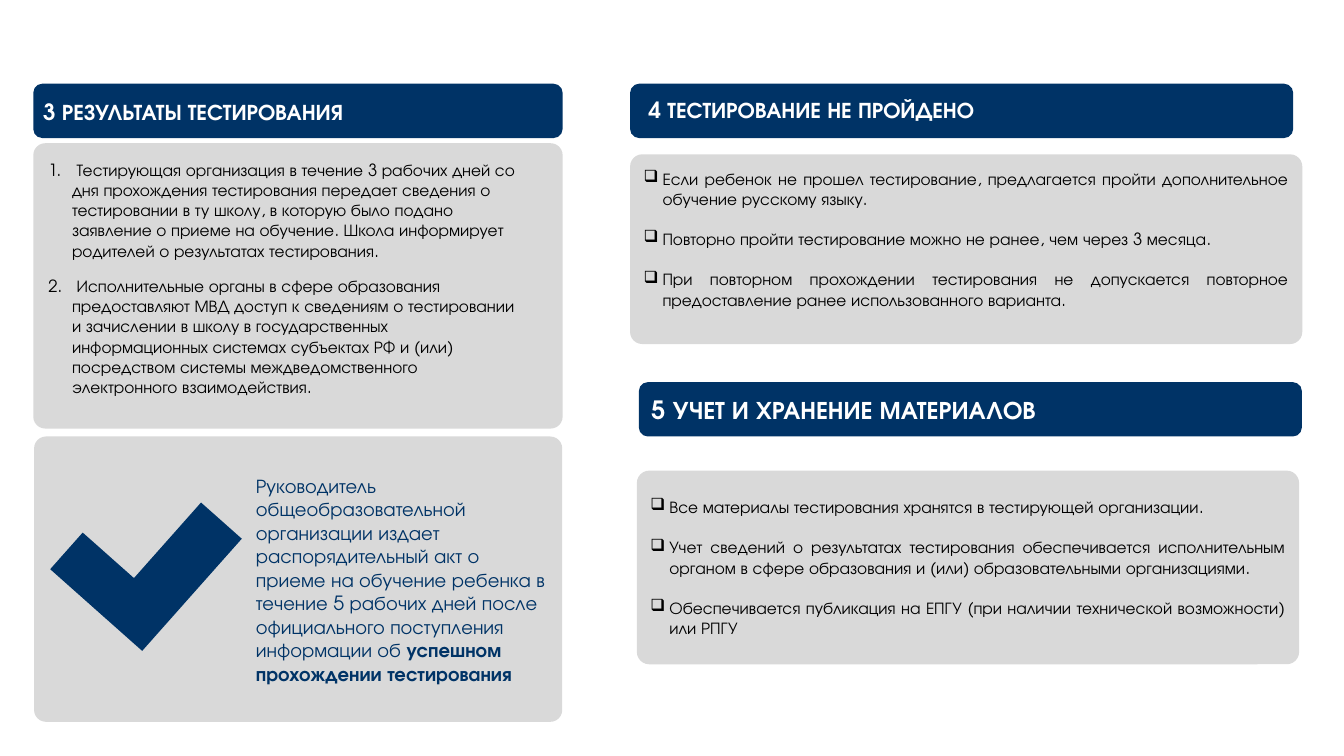
from lxml import etree
from pptx import Presentation
from pptx.dml.color import RGBColor
from pptx.enum.shapes import MSO_SHAPE
from pptx.enum.text import MSO_ANCHOR, MSO_AUTO_SIZE, PP_ALIGN
from pptx.oxml.ns import qn
from pptx.util import Cm, Pt

ROUND, CORNER = MSO_SHAPE.ROUNDED_RECTANGLE, MSO_SHAPE.CORNER
TOP, MIDDLE = MSO_ANCHOR.TOP, MSO_ANCHOR.MIDDLE
LEFT, JUSTIFY = PP_ALIGN.LEFT, PP_ALIGN.JUSTIFY
GROW = MSO_AUTO_SIZE.SHAPE_TO_FIT_TEXT

FONT = "TeX Gyre Adventor"
COLORS = {"navy": "003366", "gray": "D9D9D9", "white": "FFFFFF", "black": "000000"}
BOX_ADJ, PANEL_ADJ, HEADER_ADJ = 0.064, 0.042, 0.167

RESULTS = [
    " Тестирующая организация в течение 3 рабочих дней со дня прохождения тестирования передает сведения о тестировании в ту школу, в которую было подано заявление о приеме на обучение. Школа информирует родителей о результатах тестирования.",
    " Исполнительные органы в сфере образования предоставляют МВД доступ к сведениям о тестировании и зачислении в школу в государственных информационных системах субъектах РФ и (или) посредством системы междведомственного электронного взаимодействия.",
]
ORDER = [[
    ("Руководитель общеобразовательной организации издает распорядительный акт о приеме на обучение ребенка в течение 5 рабочих дней после официального поступления информации об ", False),
    ("успешном прохождении тестирования", True),
]]
FAILED = [
    "Если ребенок не прошел тестирование, предлагается пройти дополнительное обучение русскому языку.",
    "Повторно пройти тестирование можно не ранее, чем через 3 месяца.",
    "При повторном прохождении тестирования не допускается повторное предоставление ранее использованного варианта.",
]
STORAGE = [
    "Все материалы тестирования хранятся в тестирующей организации.",
    "Учет сведений о результатах тестирования обеспечивается исполнительным органом в сфере образования и (или) образовательными организациями.",
    "Обеспечивается публикация на ЕПГУ (при наличии технической возможности) или РПГУ",
]
HEADERS = [
    ((0.84, 2.11, 13.34, 1.37), (0.84, 2.34, 15.67, 0.94), "3 РЕЗУЛЬТАТЫ ТЕСТИРОВАНИЯ"),
    ((15.88, 2.11, 16.71, 1.37), (16.1, 2.31, 13.94, 0.94), "4 ТЕСТИРОВАНИЕ НЕ ПРОЙДЕНО"),
]
LAST_HEADER = ((16.1, 9.63, 16.71, 1.37), "5 УЧЕТ И ХРАНЕНИЕ МАТЕРИАЛОВ")
PANELS = [(0.84, 3.61, 13.34, 7.19), (0.86, 11, 13.31, 7.19)]
RESULTS_BOX = (0.84, 3.61, 15.24, 6.81)
ORDER_BOX = (6.12, 12.47, 8.05, 4.27)
CHECK_BOX = (2.13, 12.07, 3.1, 3.78)
CHECKLISTS = [
    ((15.88, 3.89, 16.94, 4.78), FAILED, 0.64),
    ((16.05, 11.86, 16.69, 4.88), STORAGE, 0.13),
]
NUMBERED = ("a:buAutoNum", {"type": "arabicPeriod"}, 0.6)
BOXED = ("a:buChar", {"char": "❑"}, 0.48)


def add_box(slide, box, fill=None, kind=ROUND, adj=(BOX_ADJ,)):
    sp = slide.shapes.add_shape(kind, *map(Cm, box))
    sp.shadow.inherit = False
    sp.line.fill.background()
    if fill:
        sp.fill.solid()
        sp.fill.fore_color.rgb = RGBColor.from_string(COLORS[fill])
    else:
        sp.fill.background()
    for i, value in enumerate(adj):
        sp.adjustments[i] = value
    return sp


def write(sp, paragraphs, size=12, color="black", bold=False, align=LEFT,
          anchor=MIDDLE, gap=0, bullet=None, right=0.25, bottom=0.13):
    tf = sp.text_frame
    tf.word_wrap = True
    tf.vertical_anchor = anchor
    tf.margin_right, tf.margin_bottom = Cm(right), Cm(bottom)
    for i, content in enumerate(paragraphs):
        p = tf.add_paragraph() if i else tf.paragraphs[0]
        p.alignment = align
        p.space_before = Pt(gap if i else 0)
        if bullet:
            tag, attributes, indent = bullet
            pPr = p._p.get_or_add_pPr()
            pPr.set("marL", str(Cm(indent)))
            pPr.set("indent", str(-Cm(indent)))
            etree.SubElement(pPr, qn(tag), attributes)
        runs = [(content, bold)] if isinstance(content, str) else content
        for text, is_bold in runs:
            r = p.add_run()
            r.text = text
            r.font.name = FONT
            r.font.size = Pt(size)
            r.font.bold = is_bold
            r.font.color.rgb = RGBColor.from_string(COLORS[color])


def main():
    """Build the slide on testing results and save it."""
    prs = Presentation()
    prs.slide_width, prs.slide_height = Cm(33.87), Cm(19.05)
    s = prs.slides.add_slide(prs.slide_layouts[6])

    for box in PANELS:
        add_box(s, box, "gray", adj=(PANEL_ADJ,))
    for box, title_box, title in HEADERS:
        add_box(s, box, "navy", adj=(HEADER_ADJ,))
        tb = s.shapes.add_textbox(*map(Cm, title_box))
        write(tb, [title], size=16, color="white", bold=True, anchor=TOP)
        tb.text_frame.auto_size = GROW
    box, title = LAST_HEADER
    write(add_box(s, box, "navy", adj=(HEADER_ADJ,)), [title],
          size=18, color="white", bold=True)

    write(add_box(s, RESULTS_BOX), RESULTS, gap=10.9, bullet=NUMBERED, right=2.8)
    write(add_box(s, ORDER_BOX), ORDER, size=14, color="navy")
    check = add_box(s, CHECK_BOX, "navy", CORNER, (0.398, 0.443))
    check.rotation = 41.6
    check.element.spPr.find(qn("a:xfrm")).set("flipH", "1")

    for box, items, bottom in CHECKLISTS:
        write(add_box(s, box, "gray"), items, align=JUSTIFY, gap=14.4,
              bullet=BOXED, bottom=bottom)
    prs.save("out.pptx")


if __name__ == "__main__":
    main()
